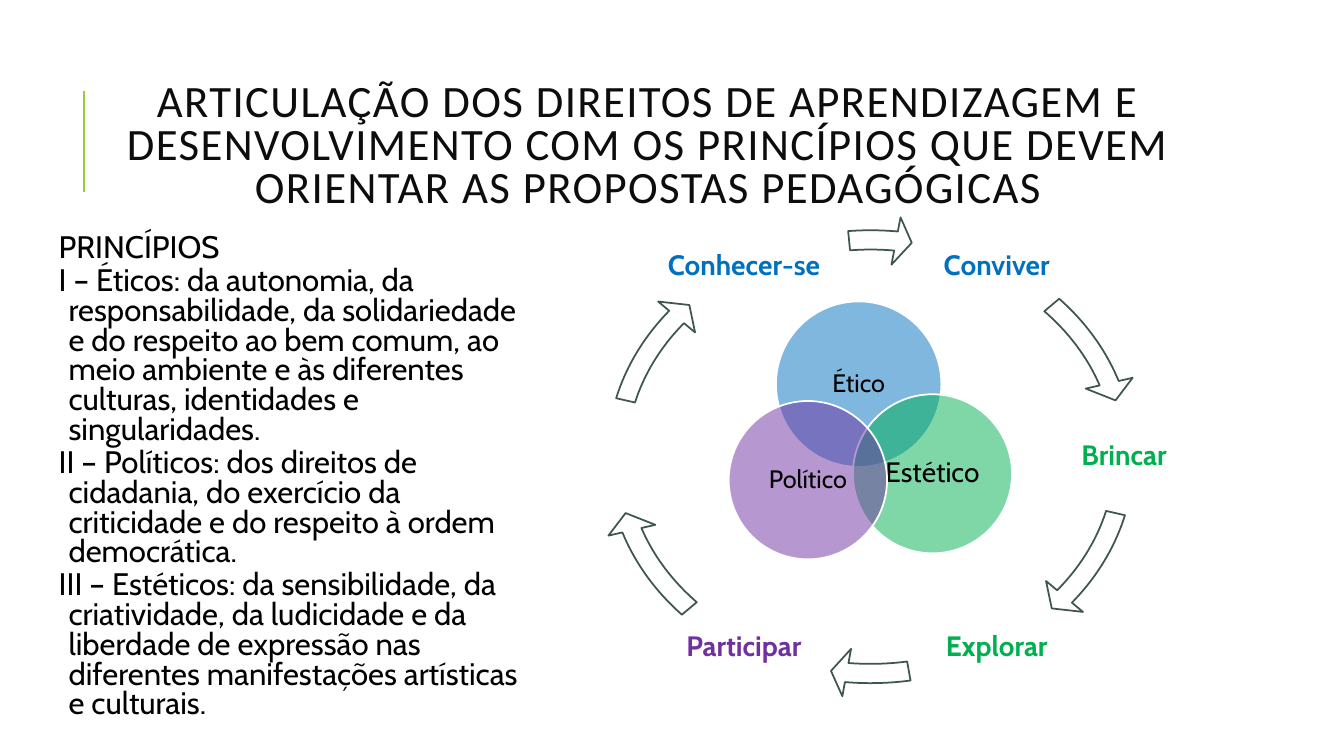
import pptx
import pptx.dml.color
import pptx.enum.shapes
import pptx.enum.text
import pptx.oxml
import pptx.oxml.ns
import pptx.util
from pptx.util import Cm

THEME = {
    "heading_font": "Calibri", "body_font": "Cabin",
    "title_size": 32, "body_size": 22.2, "right_size": 20, "principle_size": 18,
    "title": "0D0D0D", "text": "000000", "accent": "99CB38",
    "white": "FFFFFF", "arrow_line": "3F564A",
    "blue": "0070C0", "green": "00B050", "purple": "7030A0",
}
SHAPES = pptx.enum.shapes.MSO_SHAPE
ALIGN = pptx.enum.text.PP_ALIGN
ANCHOR = pptx.enum.text.MSO_ANCHOR


def rgb(name):
    return pptx.dml.color.RGBColor.from_string(THEME[name])


def write(shape, paragraphs, font, size, color, *, bold=False, spacing=0.9,
          align=ALIGN.CENTER, anchor=ANCHOR.MIDDLE, inset=0.13):
    """Fill the shape with uniformly formatted paragraphs and return them."""
    frame = shape.text_frame
    frame_format = {"word_wrap": True, "vertical_anchor": anchor,
                    "margin_left": Cm(inset), "margin_right": Cm(inset),
                    "margin_top": Cm(inset), "margin_bottom": Cm(inset)}
    for attribute, value in frame_format.items():
        setattr(frame, attribute, value)
    frame.text = "\n".join(paragraphs)
    font_format = {"name": THEME[font], "size": pptx.util.Pt(THEME[size]), "bold": bold}
    for paragraph in frame.paragraphs:
        paragraph.alignment = align
        paragraph.line_spacing = spacing
        run_font = paragraph.runs[0].font
        for attribute, value in font_format.items():
            setattr(run_font, attribute, value)
        run_font.color.rgb = rgb(color)
    return frame.paragraphs


deck = pptx.Presentation()
deck.slide_width, deck.slide_height = Cm(33.87), Cm(19.05)
slide = deck.slides.add_slide(deck.slide_layouts[6])
shapes = slide.shapes

# Title with its accent rule
rule = shapes.add_connector(pptx.enum.shapes.MSO_CONNECTOR.STRAIGHT,
                            Cm(2.11), Cm(4.83), Cm(2.11), Cm(2.29))
rule.line.color.rgb = rgb("accent")
rule.line.width = pptx.util.Pt(1.5)
rule._element.spPr.append(pptx.oxml.parse_xml(
    f"<a:effectLst {pptx.oxml.ns.nsdecls('a')}/>"))

title = shapes.add_textbox(Cm(2.84), Cm(1.63), Cm(27), Cm(4.17))
title_paragraphs = write(
    title,
    ["ARTICULAÇÃO DOS DIREITOS DE APRENDIZAGEM E DESENVOLVIMENTO COM OS "
     "PRINCÍPIOS QUE DEVEM ORIENTAR AS PROPOSTAS PEDAGÓGICAS"],
    "heading_font", "title_size", "title", spacing=0.8, inset=0.25)
title_paragraphs[0].runs[0]._r.get_or_add_rPr().set("spc", "100")

# Principles in words
principles = shapes.add_textbox(Cm(1.35), Cm(5.79), Cm(11.84), Cm(12.62))
principle_paragraphs = write(
    principles,
    ["PRINCÍPIOS",
     "I – Éticos: da autonomia, da responsabilidade, da solidariedade e do respeito "
     "ao bem comum, ao meio ambiente e às diferentes culturas, identidades e "
     "singularidades.",
     "II – Políticos: dos direitos de cidadania, do exercício da criticidade e do "
     "respeito à ordem democrática.",
     "III – Estéticos: da sensibilidade, da criatividade, da ludicidade e da "
     "liberdade de expressão nas diferentes manifestações artísticas e culturais."],
    "body_font", "body_size", "text", spacing=0.8, align=ALIGN.LEFT, anchor=ANCHOR.TOP)
for paragraph in principle_paragraphs:
    paragraph.space_after = pptx.util.Pt(2)
    hanging = paragraph._p.get_or_add_pPr()
    hanging.set("marL", str(Cm(0.25)))
    hanging.set("indent", str(-Cm(0.25)))

# Cycle of learning rights: label, centre, width, colour
rights = [
    ("Conviver", 25.12, 6.71, 3.96, "blue"),
    ("Brincar", 28.33, 11.51, 3.43, "green"),
    ("Explorar", 25.12, 16.31, 4.14, "green"),
    ("Participar", 18.75, 16.31, 4.06, "purple"),
    ("Conhecer-se", 18.75, 6.71, 5.13, "blue"),
]
RIGHT_HEIGHT = 2.49
for right, x, y, width, color in rights:
    label = shapes.add_textbox(Cm(x - width / 2), Cm(y - RIGHT_HEIGHT / 2),
                               Cm(width), Cm(RIGHT_HEIGHT))
    write(label, [right], "body_font", "right_size", color, bold=True, inset=0.05)

# All arrows share one ring; each has its own end and start angle
arrow_angles = [(205.73, 192.04), (21.46, 7.77), (57.78, 47.92),
                (97.73, 84.04), (129.46, 115.77), (166.04, 158.6)]
for end, start in arrow_angles:
    arrow = shapes.add_shape(SHAPES.CIRCULAR_ARROW, Cm(14.94), Cm(5.44), Cm(14), Cm(12.14))
    arrow.shadow.inherit = False
    for index, value in enumerate((0.04, 2.5, end, start, 0.05)):
        arrow.adjustments[index] = value
    arrow.fill.solid()
    arrow.fill.fore_color.rgb = rgb("white")
    arrow.line.color.rgb = rgb("arrow_line")
    arrow.line.width = pptx.util.Pt(1.25)

# Overlapping principles: label, centre, diameter, colour, text size
circles = [
    ("Ético", 21.64, 9.68, 4.17, "blue", "principle_size"),
    ("Estético", 23.5, 11.94, 4.01, "green", "right_size"),
    ("Político", 20.36, 12.1, 3.99, "purple", "principle_size"),
]
for principle, x, y, diameter, color, size in circles:
    circle = shapes.add_shape(SHAPES.OVAL, Cm(x - diameter / 2), Cm(y - diameter / 2),
                              Cm(diameter), Cm(diameter))
    circle.shadow.inherit = False
    circle.fill.solid()
    circle.fill.fore_color.rgb = rgb(color)
    solid_color = circle._element.spPr.find(".//" + pptx.oxml.ns.qn("a:srgbClr"))
    solid_color.append(pptx.oxml.parse_xml(
        f"<a:alpha {pptx.oxml.ns.nsdecls('a')} val='50000'/>"))
    circle.line.color.rgb = rgb("white")
    circle.line.width = pptx.util.Pt(1.25)
    write(circle, [principle], "body_font", size, "text")

deck.save("out.pptx")
